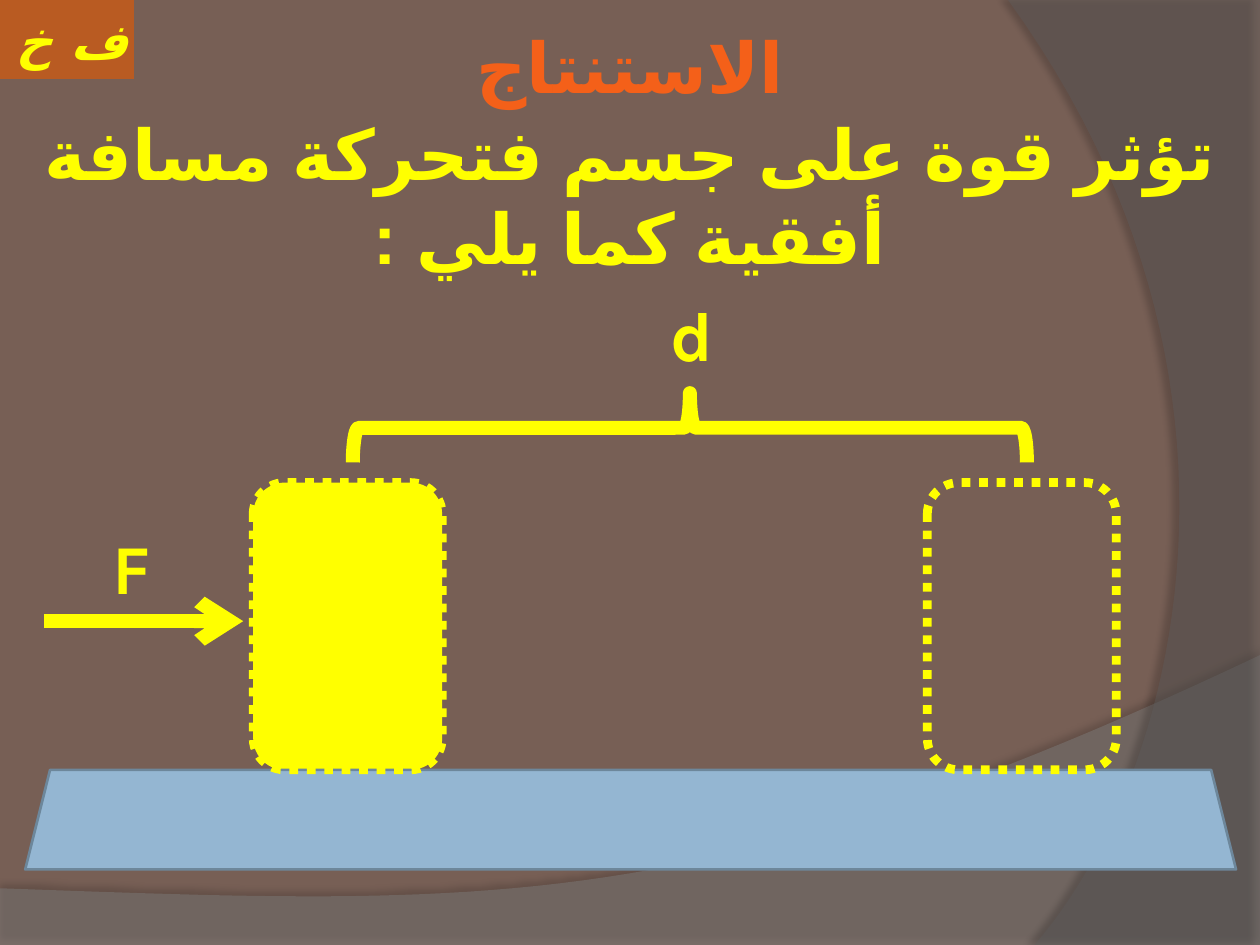
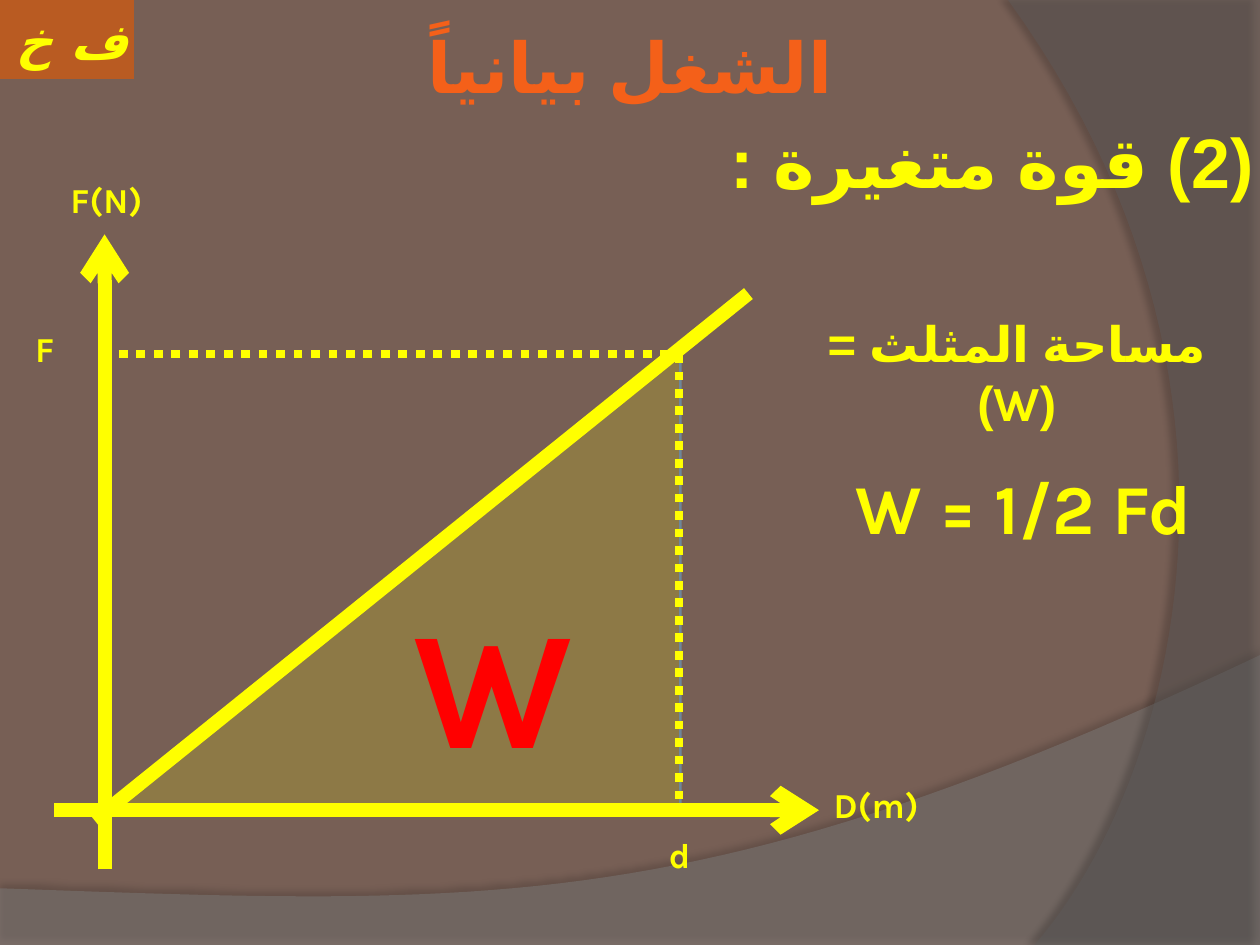
from lxml import etree
from pptx import Presentation
from pptx.dml.color import RGBColor
from pptx.enum.dml import MSO_LINE
from pptx.enum.shapes import MSO_CONNECTOR, MSO_SHAPE
from pptx.enum.text import MSO_ANCHOR, PP_ALIGN
from pptx.oxml.ns import qn
from pptx.util import Inches, Pt

YELLOW, RED, ORANGE = "FFFF00", "FF0000", "F46019"
BROWN, RUST, BLUE, SLATE = "775F55", "B95B22", "94B6D2", "6D879B"
LATIN_FONT, ARABIC_FONT = "Karla", "Arial"
THICK, DOTTED = 8, 5


def color(hex_code):
    """Turn a hex string into a colour."""
    return RGBColor.from_string(hex_code)


def add_node(parent, tag, **attributes):
    """Append an XML element with the given attributes."""
    return etree.SubElement(parent, qn(tag), {k: str(v) for k, v in attributes.items()})


def set_fill(shape, hex_code, opacity=100):
    """Fill a shape, or leave it hollow when no colour is given."""
    if hex_code is None:
        shape.fill.background()
        return
    shape.fill.solid()
    shape.fill.fore_color.rgb = color(hex_code)
    if opacity < 100:
        solid = shape.fill._xPr.find(qn("a:solidFill"))
        add_node(solid[0], "a:alpha", val=opacity * 1000)


def set_line(line, hex_code, width, dotted=False):
    """Style an outline or a connector."""
    line.color.rgb = color(hex_code)
    line.width = Pt(width)
    if dotted:
        line.dash_style = MSO_LINE.ROUND_DOT


def write(frame, text, size, hex_code=YELLOW, font=LATIN_FONT, italic=False,
          align=PP_ALIGN.CENTER, anchor=MSO_ANCHOR.MIDDLE):
    """Write one bold right-to-left paragraph."""
    frame.text = text
    frame.vertical_anchor = anchor
    paragraph = frame.paragraphs[0]
    paragraph.alignment = align
    paragraph._p.get_or_add_pPr().set("rtl", "1")
    for run in paragraph.runs:
        run.font.size = Pt(size)
        run.font.bold = True
        run.font.italic = italic
        run.font.name = font
        run.font.color.rgb = color(hex_code)
        properties = run._r.get_or_add_rPr()
        properties.set("lang", "ar-SA")
        add_node(properties, "a:cs", typeface=ARABIC_FONT)


def add_label(slide, box, text, size, inset=0.05, **style):
    """Add a wrapped text box."""
    frame = slide.shapes.add_textbox(*map(Inches, box)).text_frame
    frame.word_wrap = True
    frame.margin_left = frame.margin_right = Inches(inset)
    frame.margin_top = frame.margin_bottom = Inches(0.05)
    write(frame, text, size, **style)


def add_figure(slide, kind, box, fill=None, opacity=100, line=None, width=1.5, dotted=False):
    """Add a preset shape without shadow."""
    figure = slide.shapes.add_shape(kind, *map(Inches, box))
    figure.shadow.inherit = False
    set_fill(figure, fill, opacity)
    if line:
        set_line(figure.line, line, width, dotted)
    else:
        figure.line.fill.background()
    return figure


def add_stroke(slide, start, end, width=THICK, dotted=False, arrow=False):
    """Add a yellow straight line, optionally dotted or with an arrowhead."""
    stroke = slide.shapes.add_connector(
        MSO_CONNECTOR.STRAIGHT, *map(Inches, (*start, *end)))
    set_line(stroke.line, YELLOW, width, dotted)
    if arrow:
        add_node(stroke.line._get_or_add_ln(), "a:tailEnd", type="arrow")
    add_node(stroke._element.spPr, "a:effectLst")


def bezier(p0, p1, p2, p3, steps=48):
    """List points along a cubic curve."""
    ts = [i / steps for i in range(steps + 1)]
    return [tuple((1 - t) ** 3 * a + 3 * t * (1 - t) ** 2 * b
                  + 3 * t * t * (1 - t) * c + t ** 3 * d
                  for a, b, c, d in zip(p0, p1, p2, p3)) for t in ts]


def add_wave(slide, points, fill, opacity, shade, distance, direction):
    """Add a translucent background wave with a soft shadow."""
    start, *rest = [(Inches(x), Inches(y)) for x, y in points]
    builder = slide.shapes.build_freeform(*start)
    builder.add_line_segments(rest, close=True)
    wave = builder.convert_to_shape()
    set_fill(wave, fill, opacity)
    wave.line.fill.background()
    wave.shadow.inherit = False
    effects = wave._element.spPr.find(qn("a:effectLst"))
    shadow = add_node(effects, "a:outerShdw", blurRad=Pt(4), dist=Pt(distance),
                      dir=direction * 60000, algn="ctr", rotWithShape=0)
    black = add_node(shadow, "a:srgbClr", val="000000")
    add_node(black, "a:alpha", val=shade * 1000)


def add_page(deck, title):
    """Add a slide with the shared background, corner buttons and title."""
    slide = deck.slides.add_slide(deck.slide_layouts[6])
    slide.background.fill.solid()
    slide.background.fill.fore_color.rgb = color(BROWN)
    floor = bezier((10, 5.2), (5.59, 7.29), (3.91, 7.19), (0, 7.05))
    add_wave(slide, [(0, 7.5), (10, 7.5), *floor], "7F7F7F", 45, 35, 3.5, 270)
    side = bezier((8.21, 7.5), (9.35, 6.19), (10.18, 3), (8, 0))
    add_wave(slide, [(10, 0), (10, 7.5), *side], "5E5E5E", 40, 45, 4, 180)
    for letter, left in (("ف", 0.51), ("خ", 0)):
        button = add_figure(slide, MSO_SHAPE.ACTION_BUTTON_CUSTOM, (left, 0, 0.55, 0.63), RUST)
        button.text_frame.word_wrap = False
        write(button.text_frame, letter, 28, font=ARABIC_FONT, italic=True)
    add_label(slide, (0, 0.14, 10, 0.77), title, 40, inset=0.1,
              hex_code=ORANGE, anchor=MSO_ANCHOR.TOP)
    return slide


def add_conclusion(deck):
    """Show a force moving a block along a horizontal distance."""
    slide = add_page(deck, "الاستنتاج")
    add_label(slide, (0, 0.99, 10, 1.1), "تؤثر قوة على جسم فتحركة مسافة أفقية كما يلي :", 40)
    add_label(slide, (5.16, 2.18, 0.67, 0.94), "d", 40)
    add_label(slide, (0.67, 4.06, 0.75, 0.87), "F", 40)
    block_start, block_end = [(left, 3.83, 1.5, 2.28) for left in (2.01, 7.36)]
    add_figure(slide, MSO_SHAPE.ROUNDED_RECTANGLE, block_start, YELLOW)
    add_figure(slide, MSO_SHAPE.TRAPEZOID, (0.2, 6.11, 9.61, 0.79), BLUE, line=SLATE)
    for block in (block_start, block_end):
        add_figure(slide, MSO_SHAPE.ROUNDED_RECTANGLE, block,
                   line=YELLOW, width=DOTTED, dotted=True)
    add_stroke(slide, (0.35, 4.93), (1.93, 4.93), arrow=True)
    distance = add_figure(slide, MSO_SHAPE.LEFT_BRACE, (5.2, 0.72, 0.55, 5.35),
                          line=YELLOW, width=THICK)
    distance.rotation = 90


def add_work_graph(deck):
    """Show work as the area under a variable force."""
    slide = add_page(deck, "الشغل بيانياً")
    work = add_figure(slide, MSO_SHAPE.RIGHT_TRIANGLE, (0.91, 2.81, 4.49, 3.62),
                      YELLOW, opacity=17, line=SLATE)
    work._element.spPr.find(qn("a:xfrm")).set("flipH", "1")
    add_label(slide, (0, 0.92, 10, 0.71), "(2) قوة متغيرة :", 40, align=PP_ALIGN.RIGHT)
    add_label(slide, (6.18, 2.33, 3.78, 1.25), "مساحة المثلث = (W)", 28)
    add_stroke(slide, (0.83, 6.9), (0.83, 1.86), arrow=True)
    add_stroke(slide, (0.43, 6.43), (6.5, 6.43), arrow=True)
    for text, left, top, width in (("F(N)", 0.39, 1.31, 0.91), ("D(m)", 6.5, 6.11, 0.91),
                                   ("F", 0.12, 2.49, 0.47), ("d", 5.16, 6.51, 0.47)):
        add_label(slide, (left, top, width, 0.55), text, 20)
    add_stroke(slide, (0.75, 6.51), (5.94, 2.33))
    add_stroke(slide, (5.39, 2.81), (5.39, 6.43), DOTTED, dotted=True)
    add_stroke(slide, (5.31, 2.81), (0.75, 2.81), DOTTED, dotted=True)
    add_label(slide, (3.03, 4.62, 1.77, 1.57), "W", 96, hex_code=RED)
    add_label(slide, (6.57, 3.59, 3.11, 0.86), "W = 1/2 Fd", 40)


def main():
    """Build and save the deck."""
    deck = Presentation()
    deck.slide_width, deck.slide_height = Inches(10), Inches(7.5)
    add_conclusion(deck)
    add_work_graph(deck)
    deck.save("out.pptx")


if __name__ == "__main__":
    main()
